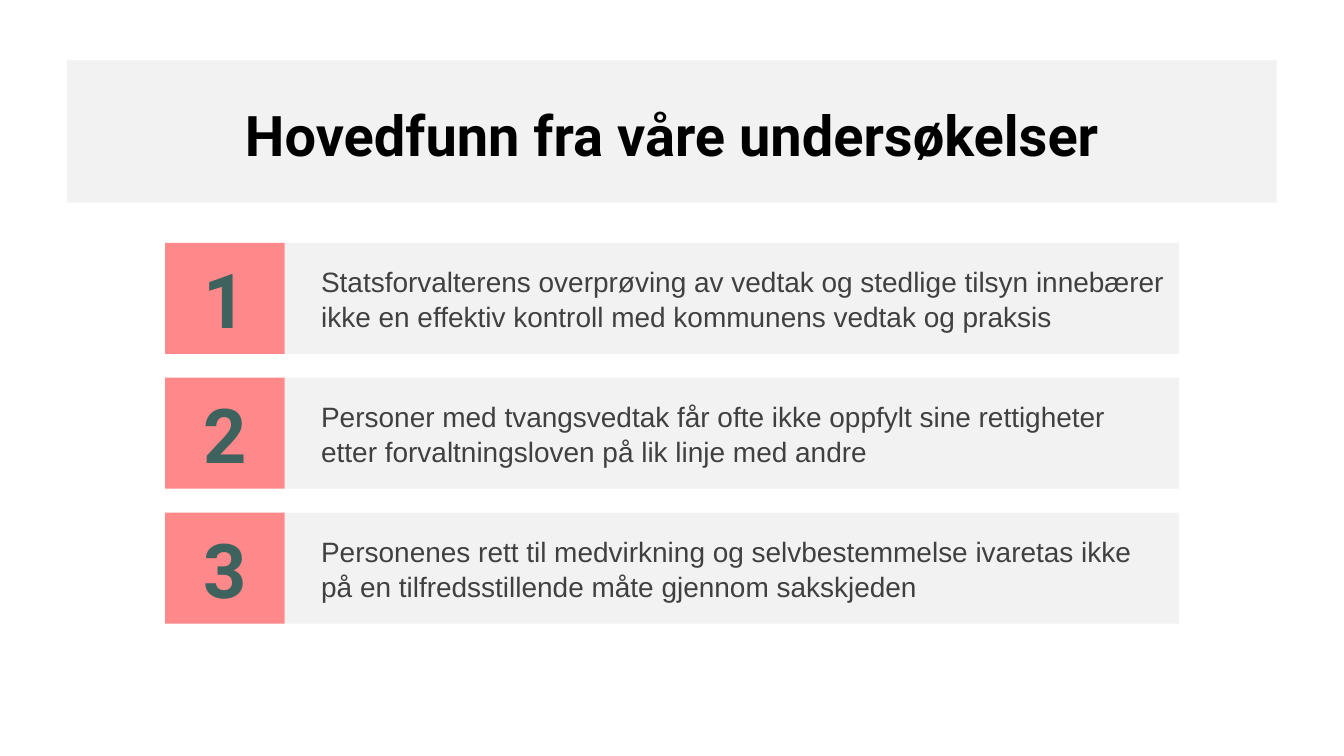
from dataclasses import dataclass

from pptx import Presentation
from pptx.dml.color import RGBColor
from pptx.enum.shapes import MSO_SHAPE as Shape
from pptx.enum.text import MSO_ANCHOR as Anchor, PP_ALIGN as Align
from pptx.util import Cm, Pt


@dataclass(frozen=True)
class Theme:
    heading_font: str = "Roboto"
    body_font: str = "Arial"
    title_size: float = 30
    number_size: float = 40.5
    body_size: float = 15
    panel: str = "F2F2F2"
    accent: str = "FF888A"
    title_color: str = "000000"
    number_color: str = "3E625D"
    body_color: str = "404040"


class FindingsSlide:
    """Holds the theme and the slide being built."""

    def __init__(self, deck, theme):
        self.theme = theme
        self.slide = deck.slides.add_slide(deck.slide_layouts[5])

    def add_text(self, shape, lines, font, size, color, bold=False, align=Align.CENTER):
        frame = shape.text_frame
        frame.word_wrap = True
        frame.vertical_anchor = Anchor.MIDDLE
        para = frame.paragraphs[0]
        para.alignment = align
        for index, line in enumerate(lines):
            if index:
                para.add_line_break()
            span = para.add_run()
            span.text = line
            span.font.name = font
            span.font.size = Pt(size)
            span.font.bold = bold
            span.font.color.rgb = RGBColor.from_string(color)
        return para

    def box(self, left, top, width, height, fill):
        box = self.slide.shapes.add_shape(
            Shape.RECTANGLE, Cm(left), Cm(top), Cm(width), Cm(height))
        box.shadow.inherit = False
        box.fill.solid()
        box.fill.fore_color.rgb = RGBColor.from_string(fill)
        box.line.fill.background()
        return box

    def title(self, text, left, top, width, height):
        theme = self.theme
        band = self.box(left, top, width, height, theme.panel)
        title = self.slide.shapes.title
        title._element.addprevious(band._element)  # band lies behind the title
        title.left, title.top = Cm(left), Cm(top + 0.05)
        title.width, title.height = Cm(width), Cm(height)
        self.add_text(title, [text], theme.heading_font, theme.title_size,
                      theme.title_color, bold=True)

    def number(self, value, left, top, width, height):
        theme = self.theme
        tile = self.box(left, top, width, height, theme.accent)
        self.add_text(tile, [str(value)], theme.heading_font, theme.number_size,
                      theme.number_color, bold=True)

    def finding(self, lines, left, top, width, height):
        theme = self.theme
        panel = self.box(left, top, width, height, theme.panel)
        frame = panel.text_frame
        frame.margin_left, frame.margin_right = Cm(0.69), Cm(0.22)
        para = self.add_text(panel, lines, theme.body_font, theme.body_size,
                             theme.body_color, align=Align.LEFT)
        para.line_spacing = 1.05


FINDINGS = [
    ["Statsforvalterens overprøving av vedtak og stedlige tilsyn innebærer "
     "ikke en effektiv kontroll med kommunens vedtak og praksis"],
    ["Personer med tvangsvedtak får ofte ikke oppfylt sine rettigheter ",
     "etter forvaltningsloven på lik linje med andre"],
    ["Personenes rett til medvirkning og selvbestemmelse ivaretas ikke "
     "på en tilfredsstillende måte gjennom sakskjeden"],
]


def main():
    deck = Presentation()
    deck.slide_width, deck.slide_height = Cm(25.4), Cm(14.29)
    page = FindingsSlide(deck, Theme())

    # Heading band
    page.title("Hovedfunn fra våre undersøkelser", 1.27, 1.14, 22.86, 2.69)

    # Numbered findings, evenly stacked
    left, first_top, pitch, height = 3.12, 4.59, 2.55, 2.1
    number_width, text_width = 2.26, 16.9
    for index, lines in enumerate(FINDINGS):
        top = first_top + index * pitch
        page.finding(lines, left + number_width, top, text_width, height)
        page.number(index + 1, left, top, number_width, height)

    deck.save("out.pptx")


if __name__ == "__main__":
    main()
